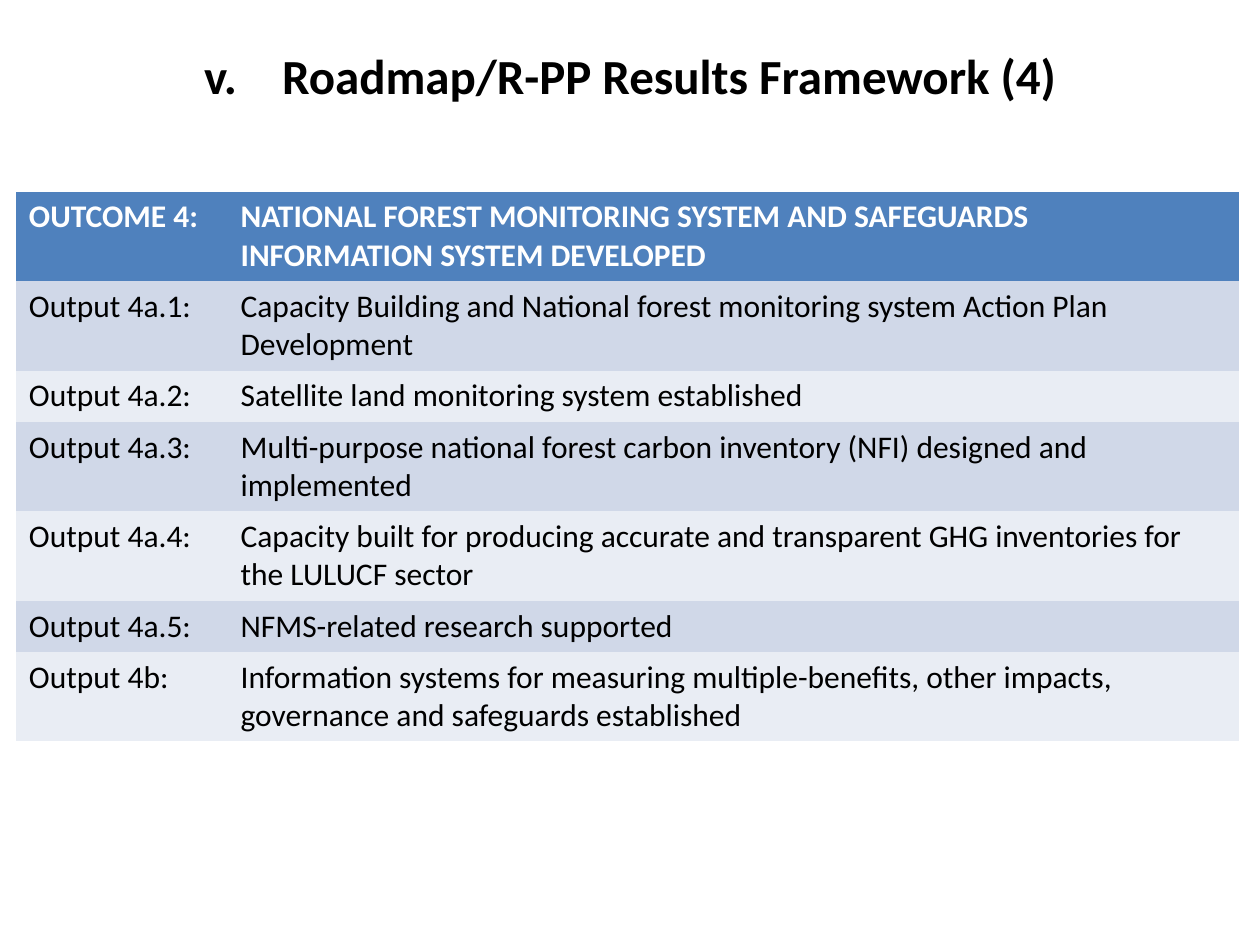
from typing import NamedTuple

from lxml.etree import SubElement
from pptx import Presentation
from pptx.dml.color import RGBColor
from pptx.enum.text import MSO_ANCHOR, MSO_AUTO_SIZE, PP_ALIGN
from pptx.oxml.ns import qn
from pptx.util import Inches, Pt

FONT = "Calibri"
BLACK, WHITE = "000000", "FFFFFF"
HEADER_FILL = "4F81BD"
BAND_FILLS = ("D0D8E8", "E9EDF4")
PLAIN_TABLE_STYLE = "{2D5ABB26-0587-4C30-8999-92F81FD0307C}"
COLUMN_WIDTHS = (1.68, 8.02)
LINE_HEIGHTS = {1: 0.4, 2: 0.71}


class ResultRow(NamedTuple):
    label: str
    description: str
    lines: int


RESULTS = (
    ResultRow("OUTCOME 4:", "NATIONAL FOREST MONITORING SYSTEM AND SAFEGUARDS "
              "INFORMATION SYSTEM DEVELOPED", 2),
    ResultRow("Output 4a.1:", "Capacity Building and National forest monitoring "
              "system Action Plan Development", 2),
    ResultRow("Output 4a.2:", "Satellite land monitoring system established", 1),
    ResultRow("Output 4a.3:", "Multi-purpose national forest carbon inventory (NFI) "
              "designed and implemented", 2),
    ResultRow("Output 4a.4:", "Capacity built for producing accurate and transparent "
              "GHG inventories for the LULUCF sector", 2),
    ResultRow("Output 4a.5:", "NFMS-related research supported", 1),
    ResultRow("Output 4b:", "Information systems for measuring multiple-benefits, "
              "other impacts, governance and safeguards established", 2),
)


def color(hex_value: str) -> RGBColor:
    return RGBColor.from_string(hex_value)


def add_run(paragraph, text: str, size: float, hex_color: str, bold: bool) -> None:
    run = paragraph.add_run()
    run.text = text
    run.font.name = FONT
    run.font.size = Pt(size)
    run.font.bold = bold
    run.font.color.rgb = color(hex_color)


def number_paragraph(paragraph, start: int) -> None:
    """Give the paragraph a lower-case Roman number with a hanging indent."""
    properties = paragraph._p.get_or_add_pPr()
    indent = Inches(0.62)
    properties.set("marL", str(indent))
    properties.set("indent", str(-indent))
    SubElement(properties, qn("a:buFont"), typeface="+mj-lt")
    SubElement(properties, qn("a:buAutoNum"), type="romanLcPeriod", startAt=str(start))


def format_title(title, text: str) -> None:
    title.left, title.top = Inches(0), Inches(0)
    title.width, title.height = Inches(10), Inches(1.25)
    frame = title.text_frame
    frame.word_wrap = True
    frame.auto_size = MSO_AUTO_SIZE.NONE
    frame.vertical_anchor = MSO_ANCHOR.MIDDLE
    paragraph = frame.paragraphs[0]
    paragraph.alignment = PP_ALIGN.CENTER
    paragraph.line_spacing = 0.9
    paragraph.space_before = Pt(5.6)
    paragraph.space_after = Pt(12)
    number_paragraph(paragraph, start=5)
    add_run(paragraph, text, 28, BLACK, bold=True)


def add_results_table(slide, results: tuple[ResultRow, ...]) -> None:
    heights = [LINE_HEIGHTS[result.lines] for result in results]
    table = slide.shapes.add_table(
        len(results), len(COLUMN_WIDTHS), Inches(0.13), Inches(1.52),
        Inches(sum(COLUMN_WIDTHS)), Inches(sum(heights))).table
    table.horz_banding = False
    table._tbl.tblPr.find(qn("a:tableStyleId")).text = PLAIN_TABLE_STYLE
    for column, width in zip(table.columns, COLUMN_WIDTHS):
        column.width = Inches(width)

    for index, (row, result) in enumerate(zip(table.rows, results)):
        row.height = Inches(heights[index])
        is_header = index == 0
        fill = HEADER_FILL if is_header else BAND_FILLS[(index - 1) % 2]
        for cell, text in zip(row.cells, (result.label, result.description)):
            cell.fill.solid()
            cell.fill.fore_color.rgb = color(fill)
            add_run(cell.text_frame.paragraphs[0], text, 18,
                    WHITE if is_header else BLACK, bold=is_header)


def main() -> None:
    presentation = Presentation()
    presentation.slide_width = Inches(10)
    presentation.slide_height = Inches(7.5)
    slide = presentation.slides.add_slide(
        presentation.slide_layouts.get_by_name("Title Only"))
    format_title(slide.shapes.title, "Roadmap/R-PP Results Framework (4)")
    add_results_table(slide, RESULTS)
    presentation.save("out.pptx")


if __name__ == "__main__":
    main()
